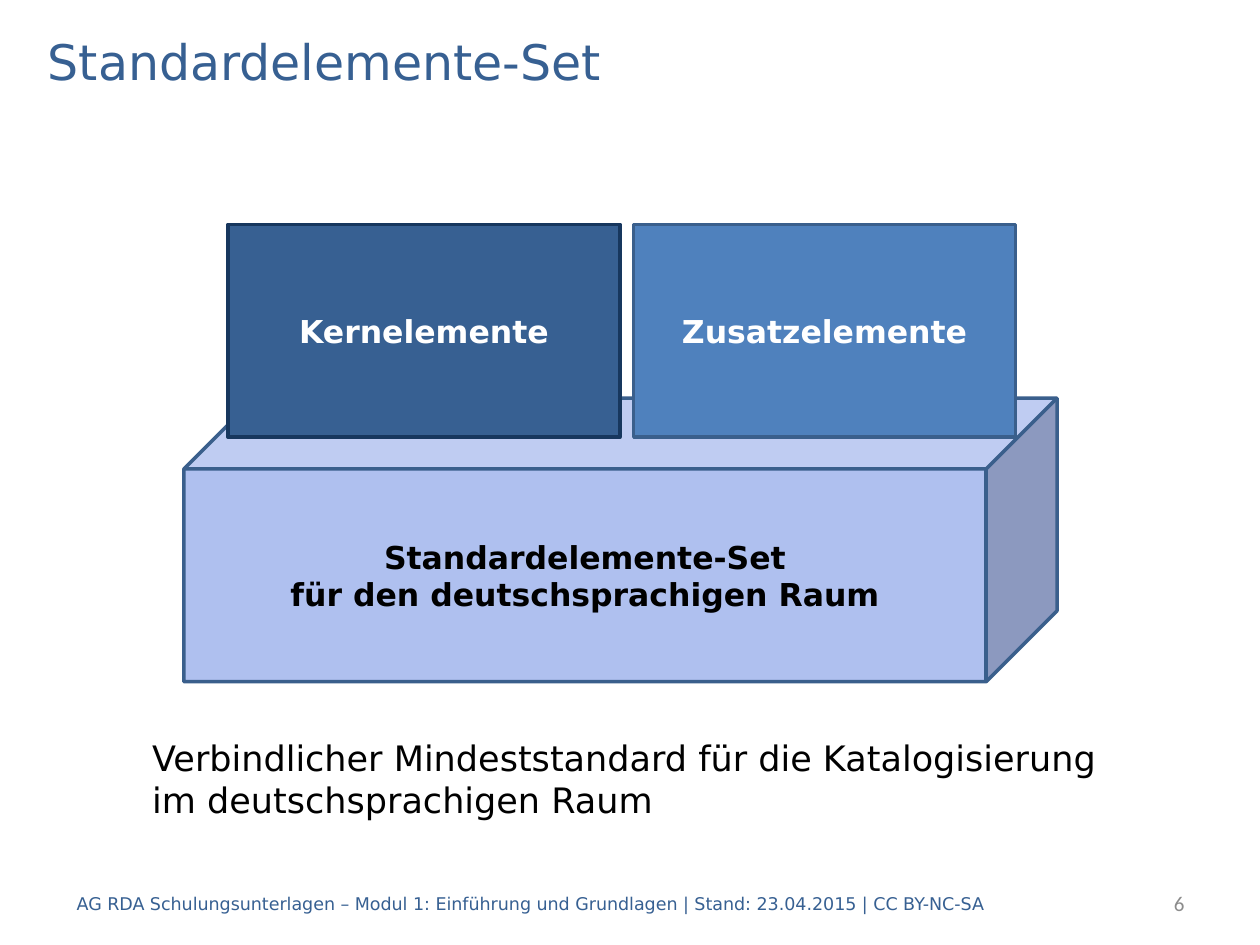
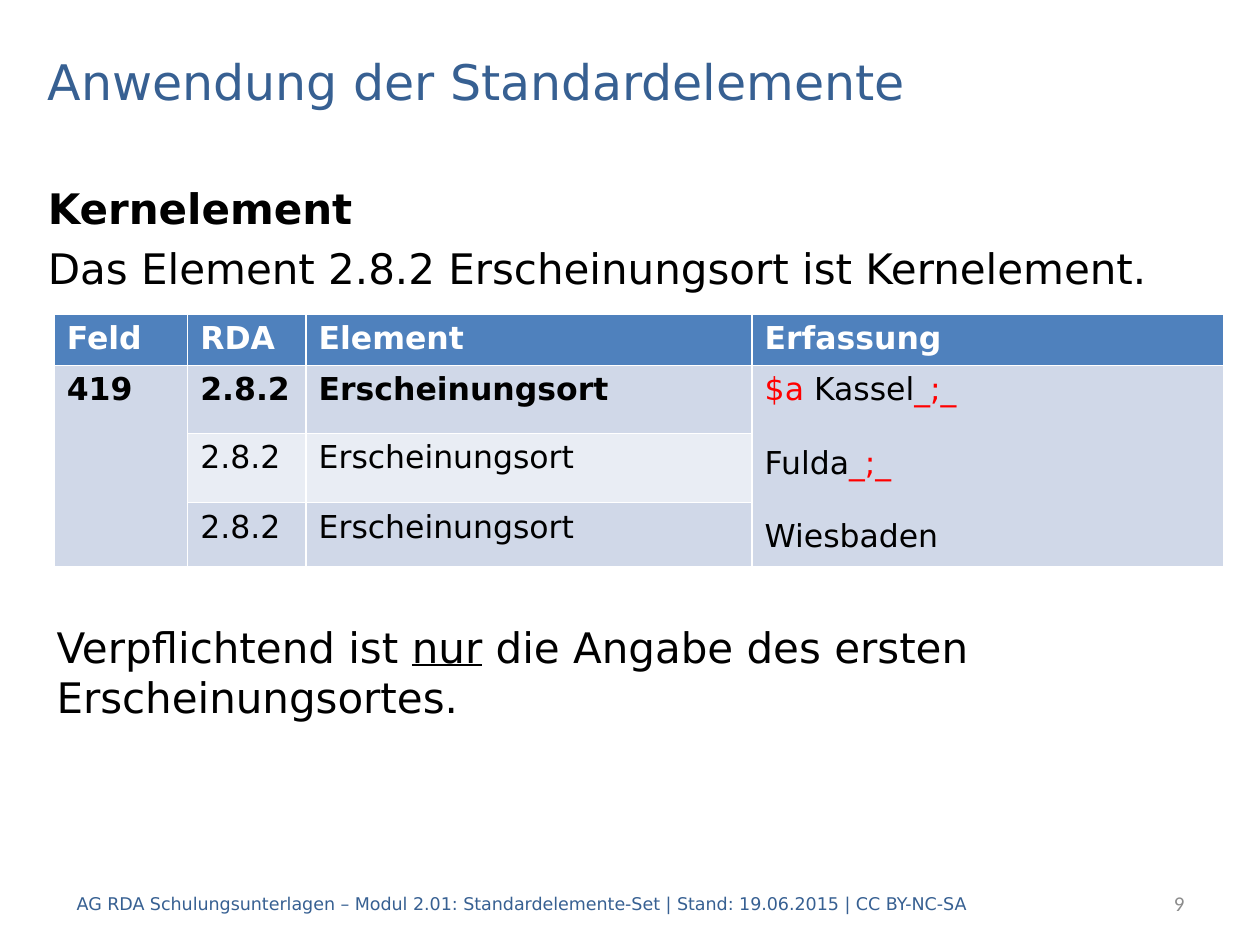
from dataclasses import dataclass

from pptx import Presentation
from pptx.dml.color import RGBColor
from pptx.enum.shapes import MSO_SHAPE as Shape
from pptx.enum.text import MSO_ANCHOR as Anchor, MSO_AUTO_SIZE as AutoSize, PP_ALIGN as Align
from pptx.oxml.ns import qn
from pptx.util import Inches, Pt


@dataclass(frozen=True)
class Theme:
    font: str = "DejaVu Sans"
    number_font: str = "Calibri"
    title_size: int = 28
    body_size: int = 24
    note_size: int = 20
    label_size: int = 18
    number_size: int = 12
    footer_size: int = 10
    dark_blue: str = "376092"
    navy: str = "17375E"
    blue: str = "4F81BD"
    edge: str = "3A5F8C"
    pale_blue: str = "AFC0EF"
    band_dark: str = "D0D8E8"
    band_light: str = "E9EDF4"
    black: str = "000000"
    white: str = "FFFFFF"
    red: str = "FF0000"
    grey: str = "8C8C8C"


THEME = Theme()
TITLE_ONLY, TITLE_AND_BODY = 5, 1


def rgb(value):
    return RGBColor.from_string(value)


class SlideBuilder:
    def __init__(self, deck, theme):
        self.deck = deck
        self.theme = theme
        self.page = None

    def start(self, layout, title, title_top, footer, number):
        theme = self.theme
        self.page = self.deck.slides.add_slide(self.deck.slide_layouts[layout])
        heading = self.page.shapes.title
        self.place(heading, 0.28, title_top, 9.45, 0.56)
        self.set_text(heading.text_frame, [title], theme.title_size, theme.dark_blue,
                      anchor=Anchor.MIDDLE)
        self.text(7.91, 6.97, 1.59, 0.4, [number], theme.number_size, theme.grey,
                  align=Align.RIGHT, anchor=Anchor.MIDDLE, font=theme.number_font)
        self.text(0.51, 6.97, 7.95, 0.4, [footer], theme.footer_size, theme.dark_blue,
                  anchor=Anchor.MIDDLE)

    def place(self, shape, left, top, width, height):
        shape.left, shape.top = Inches(left), Inches(top)
        shape.width, shape.height = Inches(width), Inches(height)

    def set_text(self, frame, lines, size, color, bold=False, align=Align.LEFT,
                 anchor=Anchor.TOP, font=None, gap=0):
        """Fill a frame; a line is a string or a list of (text, run style) pairs."""
        frame.word_wrap = True
        frame.auto_size = AutoSize.NONE
        frame.vertical_anchor = anchor
        self.set_lines(frame, lines, size, color, bold, align, font, gap)

    def set_lines(self, frame, lines, size, color, bold=False, align=Align.LEFT,
                  font=None, gap=0):
        for index, line in enumerate(lines):
            para = frame.add_paragraph() if index else frame.paragraphs[0]
            para.space_before = Pt(gap if index else 0)
            para.alignment = align
            para.font.name = font or self.theme.font
            para.font.size = Pt(size)
            para.font.bold = bold
            para.font.color.rgb = rgb(color)
            for text, style in [(line, {})] if isinstance(line, str) else line:
                span = para.add_run()
                span.text = text
                if "color" in style:
                    span.font.color.rgb = rgb(style["color"])
                if "underline" in style:
                    span.font.underline = style["underline"]

    def text(self, left, top, width, height, lines, size, color, **style):
        box = self.page.shapes.add_textbox(*map(Inches, (left, top, width, height)))
        self.set_text(box.text_frame, lines, size, color, **style)

    def body(self, left, top, width, height, lines):
        """Put lines without bullets in the body placeholder; the first is bold."""
        box = self.page.placeholders[1]
        self.place(box, left, top, width, height)
        self.set_text(box.text_frame, lines, self.theme.body_size, self.theme.black, gap=5.6)
        paras = box.text_frame.paragraphs
        paras[0].font.bold = True
        for para in paras:
            properties = para._p.get_or_add_pPr()
            properties.set("marL", "0")
            properties.set("indent", "0")
            bullet = properties.makeelement(qn("a:buNone"), {})
            properties.find(qn("a:defRPr")).addprevious(bullet)

    def block(self, group, kind, left, top, width, height, lines, fill, line, color):
        block = group.shapes.add_shape(kind, *map(Inches, (left, top, width, height)))
        block.shadow.inherit = False
        block.fill.solid()
        block.fill.fore_color.rgb = rgb(fill)
        block.line.color.rgb = rgb(line)
        block.line.width = Pt(2)
        self.set_text(block.text_frame, lines, self.theme.label_size, color, bold=True,
                      align=Align.CENTER, anchor=Anchor.MIDDLE)

    def table(self, left, top, widths, heights, rows, bold_cells, merged_columns):
        """Draw a banded table; merged_columns join all rows below the header."""
        theme = self.theme
        size = map(Inches, (left, top, sum(widths), sum(heights)))
        table = self.page.shapes.add_table(len(heights), len(widths), *size).table
        for column, width in zip(table.columns, widths):
            column.width = Inches(width)
        for row, height in zip(table.rows, heights):
            row.height = Inches(height)
        for column in merged_columns:
            table.cell(1, column).merge(table.cell(len(heights) - 1, column))
        for row, values in enumerate(rows):
            band = theme.band_dark if row % 2 else theme.band_light
            for column, lines in enumerate(values):
                cell = table.cell(row, column)
                cell.fill.solid()
                cell.fill.fore_color.rgb = rgb(band if row else theme.blue)
                self.set_lines(cell.text_frame, lines, theme.label_size,
                               theme.black if row else theme.white,
                               bold=(row, column) in bold_cells, gap=21)


def add_element_set(slide):
    theme = slide.theme
    slide.start(TITLE_ONLY, "Standardelemente-Set", 0.2,
                "AG RDA Schulungsunterlagen – Modul 1: Einführung und Grundlagen"
                " | Stand: 23.04.2015 | CC BY-NC-SA", "6")
    group = slide.page.shapes.add_group_shape()
    slide.block(group, Shape.CUBE, 1.46, 3.16, 6.93, 2.25,
                ["Standardelemente-Set", "für den deutschsprachigen Raum"],
                theme.pale_blue, theme.edge, theme.black)
    for label, left, width, fill, line in [
        ("Zusatzelemente", 5.03, 3.03, theme.blue, theme.edge),
        ("Kernelemente", 1.81, 3.11, theme.dark_blue, theme.navy),
    ]:
        slide.block(group, Shape.RECTANGLE, left, 1.78, width, 1.69, [label],
                    fill, line, theme.white)
    slide.text(1.11, 5.8, 7.84, 0.77,
               ["Verbindlicher Mindeststandard für die Katalogisierung",
                "im deutschsprachigen Raum"], theme.note_size, theme.black)


def add_usage(slide):
    theme = slide.theme
    slide.start(TITLE_AND_BODY, "Anwendung der Standardelemente", 0.36,
                "AG RDA Schulungsunterlagen – Modul 2.01: Standardelemente-Set"
                " | Stand: 19.06.2015 | CC BY-NC-SA", "9")
    slide.body(0.28, 1.4, 9.45, 1.05,
               ["Kernelement", "Das Element 2.8.2 Erscheinungsort ist Kernelement."])
    slide.text(0.35, 4.88, 8.11, 0.9,
               [[("Verpflichtend ist ", {}), ("nur", {"underline": True}),
                 (" die Angabe des ersten Erscheinungsortes.", {})]],
               theme.body_size, theme.black)
    red = {"color": theme.red}
    places = [[("$a", red), (" Kassel", {}), ("_;_", red)],
              [("Fulda", {}), ("_;_", red)],
              "Wiesbaden"]
    element = [["2.8.2"], ["Erscheinungsort"]]
    rows = [[["Feld"], ["RDA"], ["Element"], ["Erfassung"]],
            [["419"], *element, places],
            [[], *element, []],
            [[], *element, []]]
    header = [(0, column) for column in range(4)]
    first_entry = [(1, column) for column in range(3)]
    slide.table(0.43, 2.49, [1.06, 0.94, 3.54, 3.74], [0.41, 0.54, 0.55, 0.51], rows,
                bold_cells=header + first_entry, merged_columns=(0, 3))


def main():
    deck = Presentation()
    deck.slide_width, deck.slide_height = Inches(10), Inches(7.5)
    slide = SlideBuilder(deck, THEME)
    add_element_set(slide)
    add_usage(slide)
    deck.save("out.pptx")


if __name__ == "__main__":
    main()
